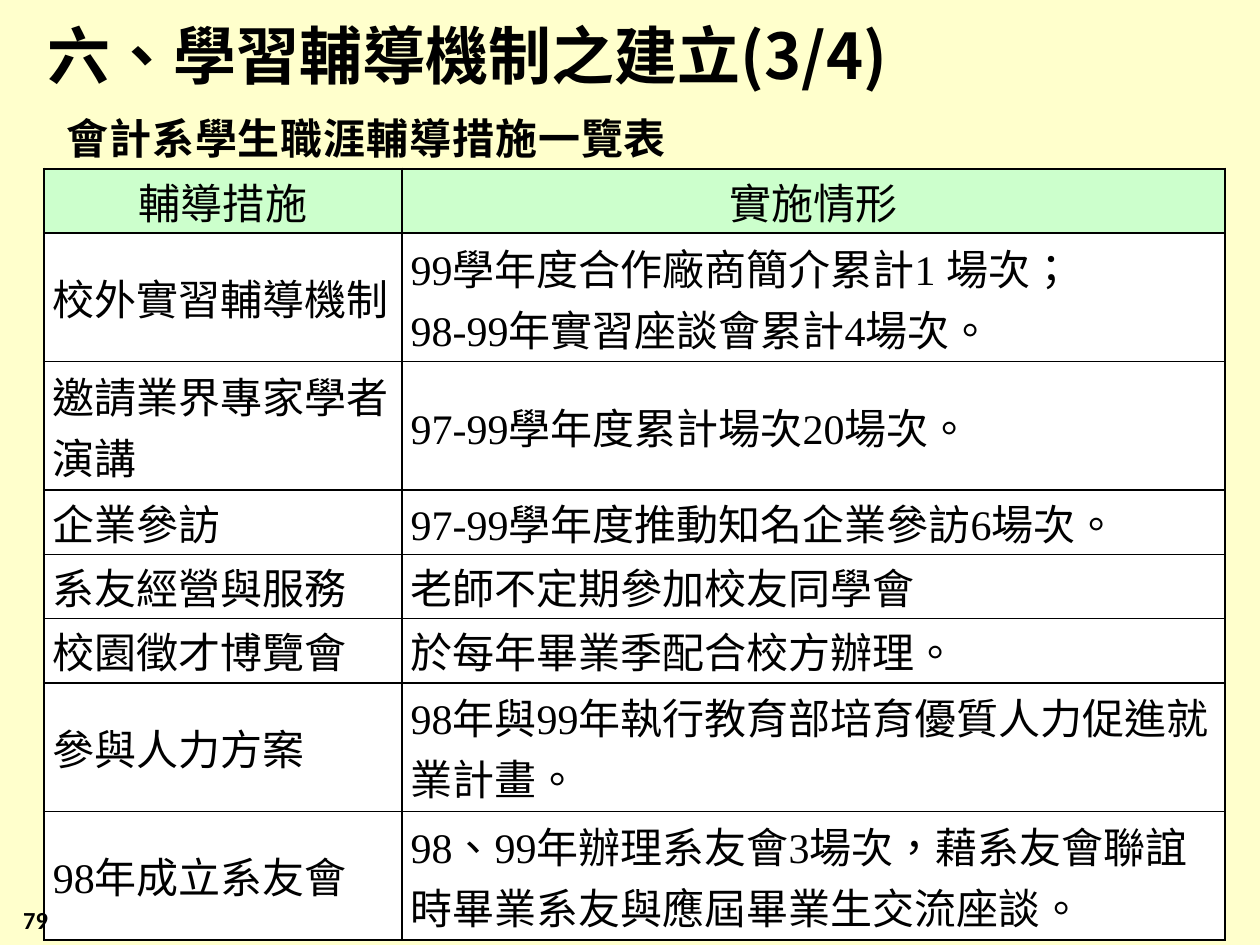
import pptx
import pptx.util
import pptx.dml.color
import pptx.enum.text
import pptx.oxml
import pptx.oxml.ns
from pptx.util import Inches

ALIGN = pptx.enum.text.PP_ALIGN
ANCHOR = pptx.enum.text.MSO_ANCHOR
FIT = pptx.enum.text.MSO_AUTO_SIZE
BODY = {"name": "Times New Roman", "size": pptx.util.Pt(24), "bold": False}
TITLE = {"name": "Noto Sans CJK SC", "size": pptx.util.Pt(36), "bold": True}
SUBTITLE = {"name": "Noto Sans CJK SC", "size": pptx.util.Pt(24), "bold": True}
NUMBER = {"name": "Calibri", "size": pptx.util.Pt(14), "bold": True}
ROWS = [
    ("輔導措施", "實施情形"),
    ("校外實習輔導機制", "99學年度合作廠商簡介累計1 場次；\n98-99年實習座談會累計4場次。"),
    ("邀請業界專家學者演講", "97-99學年度累計場次20場次。"),
    ("企業參訪", "97-99學年度推動知名企業參訪6場次。"),
    ("系友經營與服務", "老師不定期參加校友同學會"),
    ("校園徵才博覽會", "於每年畢業季配合校方辦理。"),
    ("參與人力方案", "98年與99年執行教育部培育優質人力促進就業計畫。"),
    ("98年成立系友會", "98、99年辦理系友會3場次，藉系友會聯誼時畢業系友與應屆畢業生交流座談。"),
]
COL_WIDTHS = [2.84, 6.53]
ROW_LINES = [1, 2, 2, 1, 1, 1, 2, 2]
LINE_HEIGHT = 0.51


def color(value):
    """Turn a hex string into a colour."""
    return pptx.dml.color.RGBColor.from_string(value)


def write(tf, text, fmt, align=ALIGN.LEFT, spacing=None):
    """Fill a text frame, one paragraph per line, with one format."""
    tf.text = text
    for p in tf.paragraphs:
        p.alignment = align
        for r in p.runs:
            for name, value in fmt.items():
                setattr(r.font, name, value)
            r.font.color.rgb = color("000000")
            rPr = r._r.get_or_add_rPr()
            rPr.set("lang", "zh-TW")
            if spacing:
                rPr.set("spc", str(spacing))
            if fmt["name"] == "Noto Sans CJK SC":
                ea = pptx.oxml.parse_xml(
                    f'<a:ea {pptx.oxml.ns.nsdecls("a")} typeface="{fmt["name"]}"/>')
                rPr.find(pptx.oxml.ns.qn("a:latin")).addnext(ea)


def set_borders(cell, widths):
    """Draw solid black cell borders from a dict of side to points."""
    tcPr = cell._tc.get_or_add_tcPr()
    for i, (side, width) in enumerate(widths.items()):
        tcPr.insert(i, pptx.oxml.parse_xml(
            f'<a:ln{side} {pptx.oxml.ns.nsdecls("a")} w="{pptx.util.Pt(width)}">'
            f'<a:solidFill><a:srgbClr val="000000"/></a:solidFill></a:ln{side}>'))


def add_title(s, left, top, width, height):
    """Place the slide title."""
    sp = s.shapes.title
    box = {"left": left, "top": top, "width": width, "height": height}
    for name, value in box.items():
        setattr(sp, name, Inches(value))
    tf = sp.text_frame
    tf.auto_size, tf.vertical_anchor = FIT.NONE, ANCHOR.MIDDLE
    write(tf, "六、學習輔導機制之建立(3/4)", TITLE)


def add_subtitle(s, left, top, width, height):
    """Place the caption above the table."""
    sp = s.shapes.add_textbox(*map(Inches, (left, top, width, height)))
    tf = sp.text_frame
    tf.auto_size, tf.word_wrap = FIT.SHAPE_TO_FIT_TEXT, False
    write(tf, "會計系學生職涯輔導措施一覽表", SUBTITLE, spacing=50)


def add_number(s, left, top, width, height):
    """Place the page number."""
    sp = s.shapes.add_textbox(*map(Inches, (left, top, width, height)))
    tf = sp.text_frame
    tf.word_wrap, tf.vertical_anchor = True, ANCHOR.MIDDLE
    write(tf, "79", NUMBER, ALIGN.RIGHT)


def add_measures(s, left, top):
    """Place the table of guidance measures."""
    size = (sum(COL_WIDTHS), sum(ROW_LINES) * LINE_HEIGHT)
    last_row, last_col = len(ROWS) - 1, len(COL_WIDTHS) - 1
    table = s.shapes.add_table(len(ROWS), len(COL_WIDTHS),
                               *map(Inches, (left, top, *size))).table
    table.first_row = table.horz_banding = False
    for col, width in zip(table.columns, COL_WIDTHS):
        col.width = Inches(width)
    for i, (row, lines, texts) in enumerate(zip(table.rows, ROW_LINES, ROWS)):
        row.height = Inches(lines * LINE_HEIGHT)
        for j, (cell, text) in enumerate(zip(row.cells, texts)):
            cell.margin_left = cell.margin_right = Inches(0.07)
            cell.margin_top = cell.margin_bottom = 0
            cell.vertical_anchor = ANCHOR.MIDDLE
            cell.fill.solid()
            cell.fill.fore_color.rgb = color("FFFFFF" if i else "CCFFCC")
            write(cell.text_frame, text, BODY, ALIGN.LEFT if i else ALIGN.CENTER)
            outer = {"L": j == 0, "R": j == last_col, "T": i == 0, "B": i == last_row}
            set_borders(cell, {side: 1.5 if edge else 1 for side, edge in outer.items()})


def main():
    """Build and save the slide."""
    prs = pptx.Presentation()
    prs.slide_width, prs.slide_height = Inches(10), Inches(7.5)
    s = prs.slides.add_slide(prs.slide_layouts[5])
    s.background.fill.solid()
    s.background.fill.fore_color.rgb = color("FFFFCC")
    add_title(s, 0.28, -0.19, 9, 1.25)
    add_measures(s, 0.35, 1.34)
    add_number(s, -1.85, 7.1, 2.33, 0.4)
    add_subtitle(s, 0.43, 0.84, 5.01, 0.5)
    prs.save("out.pptx")


if __name__ == "__main__":
    main()
